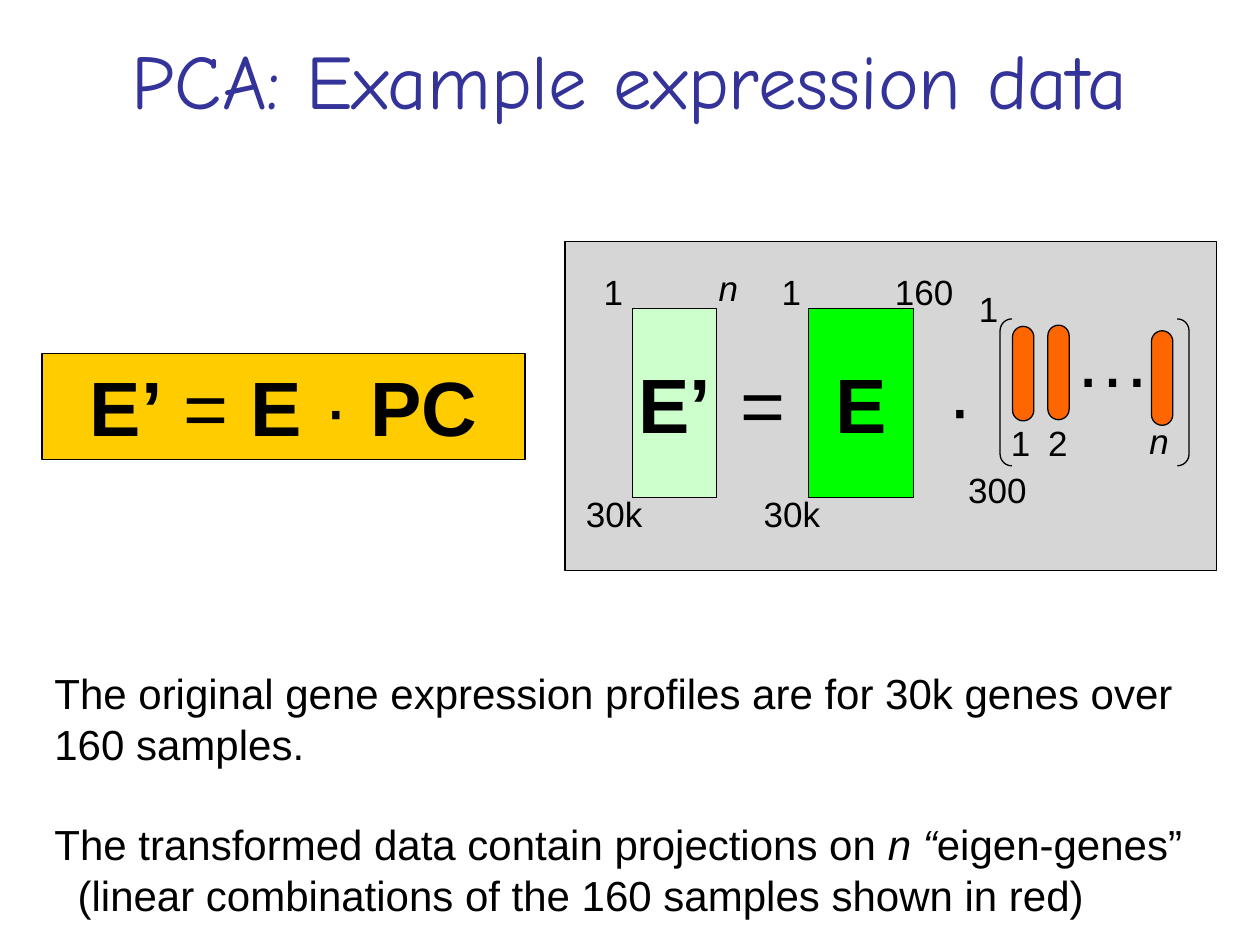
"""Build the slide on PCA of example expression data."""
from lxml.etree import SubElement
from pptx import Presentation
from pptx.dml.color import RGBColor
from pptx.enum.shapes import MSO_SHAPE
from pptx.enum.text import MSO_ANCHOR, MSO_AUTO_SIZE, PP_ALIGN
from pptx.oxml.ns import qn
from pptx.util import Pt

BOLD, ITALIC, PLAIN = {"bold": True}, {"italic": True}, {}
LABEL = (26, 31)
WIDE_LABEL = (50, 31.5)


def set_color(fmt, color):
    if hasattr(fmt, "solid"):
        fmt.solid()
        fmt.fore_color.rgb = RGBColor.from_string(color)
    else:
        fmt.color.rgb = RGBColor.from_string(color)


def add_runs(p, runs, size, color="000000", font="Arial"):
    for text, style in runs:
        r = p.add_run()
        r.text = text
        values = {"name": font, "size": Pt(size), **style}
        for name, value in values.items():
            setattr(r.font, name, value)
        set_color(r.font, color)


def set_frame(sp, wrap=True, anchor=MSO_ANCHOR.TOP, grow=True):
    tf = sp.text_frame
    values = {
        "word_wrap": wrap,
        "vertical_anchor": anchor,
        "auto_size": MSO_AUTO_SIZE.SHAPE_TO_FIT_TEXT if grow else MSO_AUTO_SIZE.NONE,
    }
    for name, value in values.items():
        setattr(tf, name, value)
    tf.paragraphs[0].alignment = PP_ALIGN.CENTER
    return tf


def add_box(shapes, kind, box, fill=None, adj=None):
    sp = shapes.add_shape(kind, *map(Pt, box))
    sp.shadow.inherit = False
    if fill:
        set_color(sp.fill, fill)
    else:
        sp.fill.background()
    set_color(sp.line, "000000")
    sp.line.width = Pt(0.75)
    if adj is not None:
        sp.adjustments[0] = adj
    return sp


def set_alpha(sp, percent):
    color = sp.fill._xPr.find(qn("a:solidFill"))[0]
    SubElement(color, qn("a:alpha"), val=str(percent * 1000))


def add_label(shapes, text, pos, size=LABEL, points=20, style=PLAIN, wrap=False):
    sp = shapes.add_textbox(*map(Pt, pos + size))
    tf = set_frame(sp, wrap)
    add_runs(tf.paragraphs[0], [(text, style)], points)


def add_matrix(shapes, name, box, fill):
    sp = add_box(shapes, MSO_SHAPE.RECTANGLE, box, fill)
    tf = set_frame(sp, False, MSO_ANCHOR.MIDDLE, False)
    add_runs(tf.paragraphs[0], [(name, BOLD)], 44)


def add_title(shapes):
    sp = shapes.add_textbox(0, 0, Pt(720), Pt(90))
    tf = set_frame(sp, anchor=MSO_ANCHOR.MIDDLE, grow=False)
    add_runs(tf.paragraphs[0], [("PCA: Example expression data", PLAIN)],
             44, "333399", "Comic Neue")


def add_equation(shapes):
    sp = add_box(shapes, MSO_SHAPE.RECTANGLE, (24, 202, 276, 60.5), "FFCC00")
    tf = set_frame(sp)
    runs = [("E’", BOLD), (" = ", PLAIN), ("E ", BOLD), ("·", PLAIN), (" PC", BOLD)]
    add_runs(tf.paragraphs[0], runs, 44)


def add_data_matrix(shapes):
    add_matrix(shapes, "E", (462.2, 176.4, 59.8, 108), "00FF00")
    add_label(shapes, "160", (503.1, 151.2), WIDE_LABEL)
    add_label(shapes, "1", (439.2, 151.2))
    add_label(shapes, "30k", (427.6, 277.9), WIDE_LABEL)


def add_projection(shapes):
    add_label(shapes, "=", (415.7, 200.2), (40.3, 60), 44, wrap=True)
    add_label(shapes, "n", (403.2, 149), style=ITALIC, wrap=True)
    add_label(shapes, "·", (534.2, 201.6), (26.6, 60), 44)
    add_matrix(shapes, "E’", (361.4, 176.4, 48.2, 108), "CCFFCC")
    add_label(shapes, "1", (337.5, 151.2))
    add_label(shapes, "30k", (326, 277.9), WIDE_LABEL)
    add_label(shapes, "300", (545, 264.2), WIDE_LABEL)


def add_components(shapes):
    add_box(shapes, MSO_SHAPE.DOUBLE_BRACKET, (571.5, 182.2, 108, 84), adj=0.08)
    for left, top in ((578.6, 186.5), (598.8, 185.8), (658, 189)):
        add_box(shapes, MSO_SHAPE.ROUNDED_RECTANGLE, (left, top, 12.2, 54), "FF6600", 0.5)
    add_label(shapes, "…", (607, 174), (58.3, 60), 44)
    add_label(shapes, "n", (649.4, 236.2), style=ITALIC, wrap=True)
    for text, pos in (("1", (570.2, 237.6)), ("2", (591.5, 237.6)), ("1", (552, 161))):
        add_label(shapes, text, pos)


def add_explanation(shapes):
    sp = shapes.add_textbox(Pt(24), Pt(378), Pt(696), Pt(152.6))
    tf = set_frame(sp)
    paragraphs = [
        ([("The original gene expression profiles are for 30k genes over 160 samples.",
           PLAIN)], 28.8, 0),
        ([("The transformed data contain projections on ", PLAIN), ("n “", ITALIC),
          ("eigen-genes”", PLAIN)], 0, 0),
        ([("(linear combinations of the 160 samples shown in red)", PLAIN)], 0, 13.3),
    ]
    for i, (runs, after, indent) in enumerate(paragraphs):
        p = tf.add_paragraph() if i else tf.paragraphs[0]
        values = {"alignment": PP_ALIGN.LEFT, "line_spacing": Pt(28.8),
                  "space_after": Pt(after)}
        for name, value in values.items():
            setattr(p, name, value)
        if indent:
            p._p.get_or_add_pPr().set("marL", str(Pt(indent)))
        add_runs(p, runs, 24)


def main():
    prs = Presentation()
    prs.slide_width, prs.slide_height = Pt(720), Pt(540)
    s = prs.slides.add_slide(prs.slide_layouts[6])
    panel = add_box(s.shapes, MSO_SHAPE.RECTANGLE, (322.8, 138, 372.2, 188.2), "808080")
    set_alpha(panel, 32)
    add_equation(s.shapes)
    add_data_matrix(s.shapes.add_group_shape().shapes)
    add_projection(s.shapes)
    add_explanation(s.shapes)
    add_components(s.shapes.add_group_shape().shapes)
    add_title(s.shapes)
    prs.save("out.pptx")


if __name__ == "__main__":
    main()
